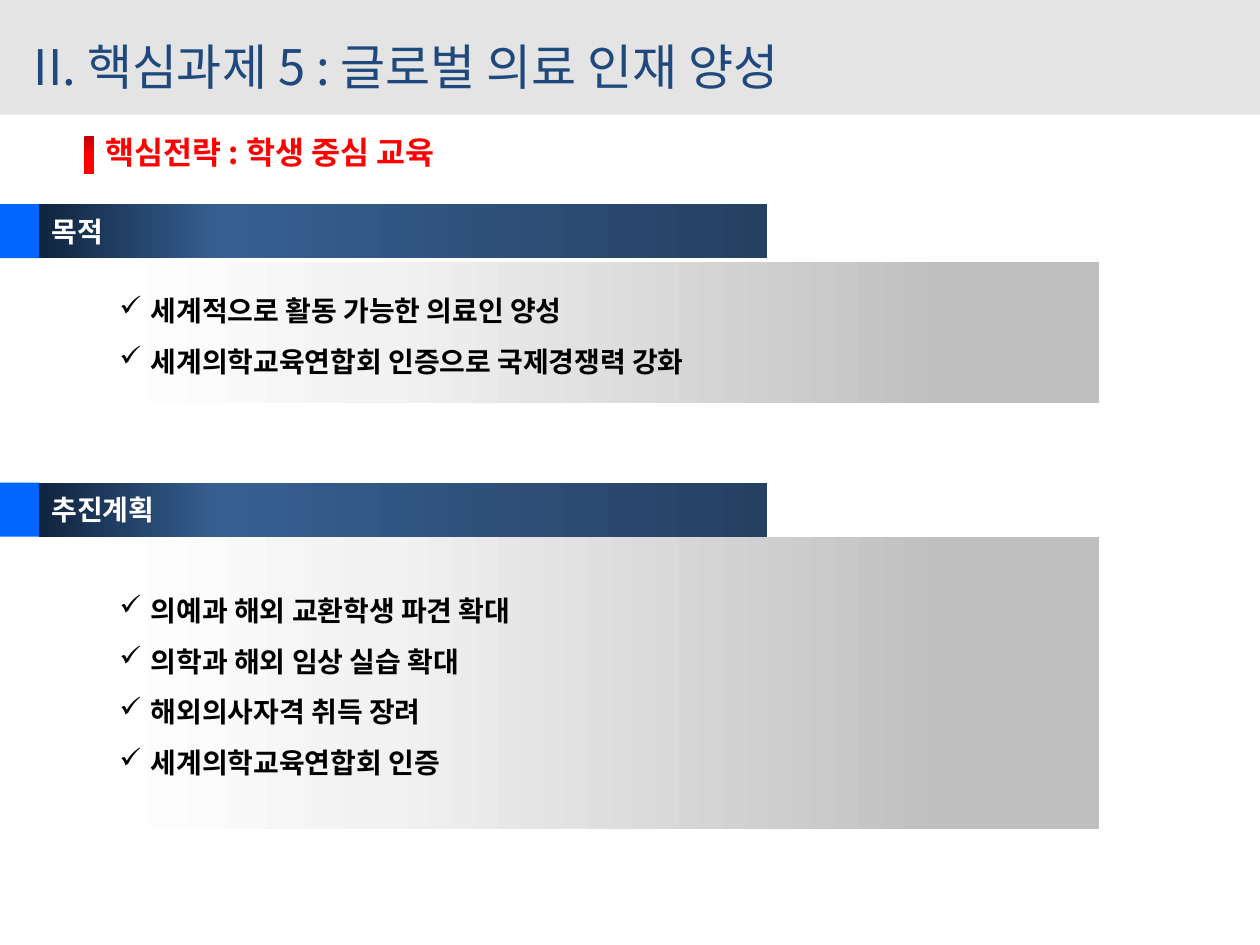
"""Build the slide on training global medical talent."""
from lxml.etree import SubElement
from pptx import Presentation
from pptx.dml.color import RGBColor
from pptx.enum.shapes import MSO_SHAPE
from pptx.enum.text import MSO_ANCHOR, PP_ALIGN
from pptx.oxml.ns import qn
from pptx.util import Inches, Pt

FONT = "Noto Sans CJK KR"
BAND = RGBColor(0xE4, 0xE4, 0xE4)
NAVY = RGBColor(0x1F, 0x49, 0x7D)
BLUE = RGBColor(0x00, 0x66, 0xFF)
RED = RGBColor(0xFF, 0x00, 0x00)
DARK_RED = RGBColor(0xC0, 0x00, 0x00)
WHITE = RGBColor(0xFF, 0xFF, 0xFF)
BLACK = RGBColor(0x00, 0x00, 0x00)

PANEL_STOPS = [(0, WHITE), (28, RGBColor(0xF2, 0xF2, 0xF2)), (85, RGBColor(0xBF, 0xBF, 0xBF))]
HEADING_STOPS = [
    (0, RGBColor(0x0F, 0x24, 0x3E)),
    (25, RGBColor(0x37, 0x60, 0x92)),
    (100, RGBColor(0x25, 0x40, 0x61)),
]
MARK_STOPS = [(0, DARK_RED), (50, RED), (100, RED)]

TITLE = "II. 핵심과제 5 : 글로벌 의료 인재 양성"
STRATEGY = "핵심전략 : 학생 중심 교육"
SECTIONS = [
    {
        "heading": "목적", "top": 1.62, "panel_top": 2.08, "panel_height": 1.12,
        "items": ["세계적으로 활동 가능한 의료인 양성", "세계의학교육연합회 인증으로 국제경쟁력 강화"],
    },
    {
        "heading": "추진계획", "top": 3.83, "panel_top": 4.26, "panel_height": 2.32,
        "items": [
            "의예과 해외 교환학생 파견 확대",
            "의학과 해외 임상 실습 확대",
            "해외의사자격 취득 장려",
            "세계의학교육연합회 인증",
        ],
    },
]
TAB_WIDTH, HEADING_WIDTH, HEADING_HEIGHT = 0.31, 5.78, 0.43
PANEL_LEFT, PANEL_WIDTH = 0.85, 7.87
BULLET_INDENT = 0.25


def add_rectangle(slide, box, color=None, stops=None, angle=0):
    shape = slide.shapes.add_shape(MSO_SHAPE.RECTANGLE, *map(Inches, box))
    shape.shadow.inherit = False
    shape.line.fill.background()
    if stops is None:
        shape.fill.solid()
        shape.fill.fore_color.rgb = color
        return shape
    shape.fill.gradient()
    shape.fill.gradient_angle = angle
    stop_list = shape._element.spPr.find(qn("a:gradFill")).find(qn("a:gsLst"))
    stop_list.clear()
    for position, stop_color in stops:
        stop = SubElement(stop_list, qn("a:gs"), pos=str(position * 1000))
        SubElement(stop, qn("a:srgbClr"), val=str(stop_color))
    return shape


def add_bullet(paragraph):
    properties = paragraph._p.get_or_add_pPr()
    properties.set("marL", str(Inches(BULLET_INDENT)))
    properties.set("indent", str(-Inches(BULLET_INDENT)))
    SubElement(properties, qn("a:buChar"), char="✓")
    paragraph.line_spacing = 1.2
    paragraph.space_after = Pt(6)


def write(shape, lines, size, color, bold=True, bulleted=False, anchor=MSO_ANCHOR.MIDDLE):
    frame = shape.text_frame
    frame.word_wrap = True
    frame.vertical_anchor = anchor
    for index, line in enumerate(lines):
        paragraph = frame.add_paragraph() if index else frame.paragraphs[0]
        paragraph.alignment = PP_ALIGN.LEFT
        if bulleted:
            add_bullet(paragraph)
        run = paragraph.add_run()
        run.text = line
        for name, value in {"name": FONT, "size": Pt(size), "bold": bold}.items():
            setattr(run.font, name, value)
        run.font.color.rgb = color
        SubElement(run._r.get_or_add_rPr(), qn("a:ea"), typeface=FONT)


def add_section(slide, section):
    panel_box = (PANEL_LEFT, section["panel_top"], PANEL_WIDTH, section["panel_height"])
    panel = add_rectangle(slide, panel_box, stops=PANEL_STOPS)
    write(panel, section["items"], 16, BLACK, bulleted=True)
    heading_box = (TAB_WIDTH, section["top"], HEADING_WIDTH, HEADING_HEIGHT)
    heading = add_rectangle(slide, heading_box, stops=HEADING_STOPS)
    write(heading, [section["heading"]], 16, WHITE)
    add_rectangle(slide, (0, section["top"], TAB_WIDTH, HEADING_HEIGHT), BLUE)


def main():
    presentation = Presentation()
    presentation.slide_width, presentation.slide_height = Inches(10), Inches(7.5)
    slide = presentation.slides.add_slide(presentation.slide_layouts[6])
    add_rectangle(slide, (0, 0, 10, 0.91), BAND)
    title = slide.shapes.add_textbox(*map(Inches, (0.17, 0.23, 9.83, 0.59)))
    write(title, [TITLE], 28, NAVY, bold=False)
    for section in SECTIONS:
        add_section(slide, section)
    strategy = slide.shapes.add_textbox(*map(Inches, (0.74, 1.01, 7.09, 0.4)))
    write(strategy, [STRATEGY], 18, RED, anchor=MSO_ANCHOR.TOP)
    add_rectangle(slide, (0.67, 1.08, 0.08, 0.3), stops=MARK_STOPS, angle=270)
    presentation.save("out.pptx")


if __name__ == "__main__":
    main()
